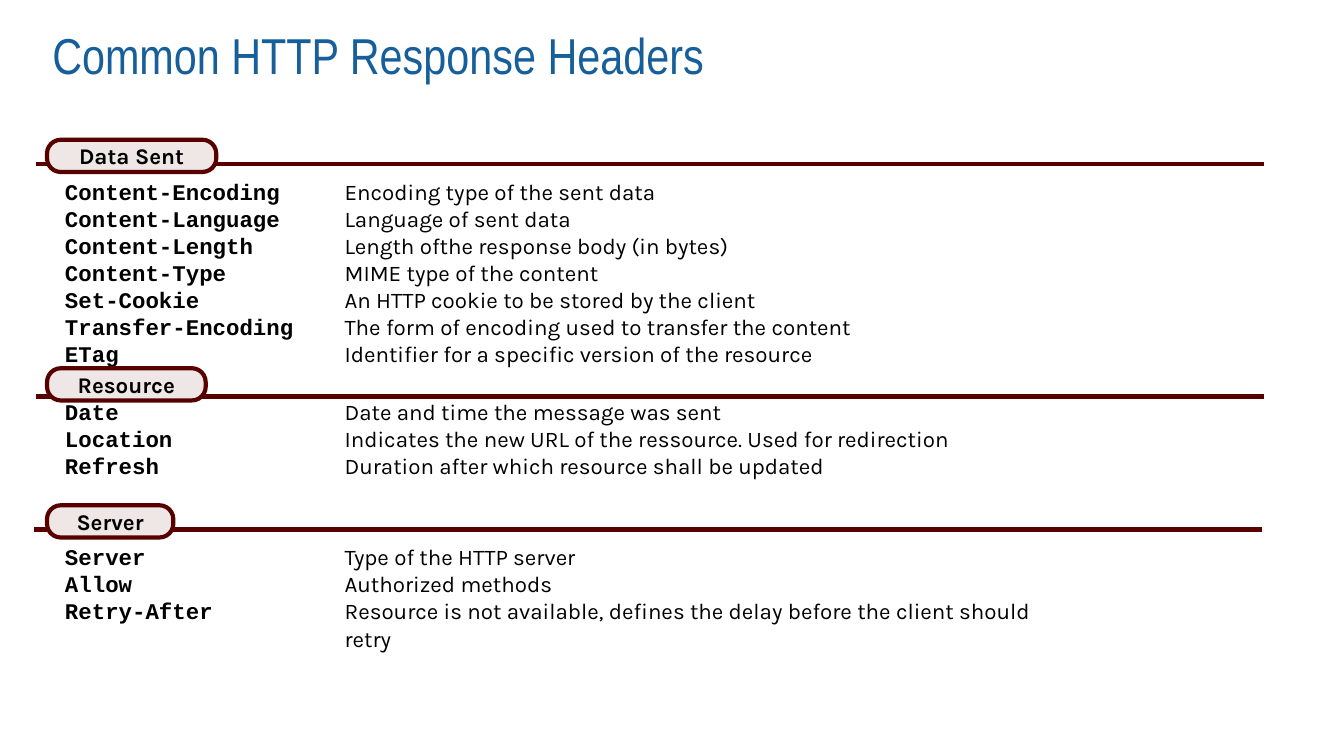
"""Build a slide listing common HTTP response headers by group."""
import pptx
import pptx.util
import pptx.dml.color
import pptx.enum.shapes
import pptx.enum.text
import pptx.oxml

Pt = pptx.util.Pt
Text = pptx.enum.text

TITLE = "Common HTTP Response Headers"
GROUPS = [
    {
        "label": "Data Sent", "wide": 90.7, "pill": 74.9,
        "left": 19.4, "rule": 87.8, "text": 92.2,
        "rows": [
            ("Content-Encoding", "Encoding type of the sent data"),
            ("Content-Language", "Language of sent data"),
            ("Content-Length", "Length ofthe response body (in bytes)"),
            ("Content-Type", "MIME type of the content"),
            ("Set-Cookie", "An HTTP cookie to be stored by the client"),
            ("Transfer-Encoding", "The form of encoding used to transfer the content"),
            ("ETag", "Identifier for a specific version of the resource"),
        ],
    },
    {
        "label": "Resource", "wide": 85, "pill": 197.3,
        "left": 19.4, "rule": 212.4, "text": 210.2,
        "rows": [
            ("Date", "Date and time the message was sent"),
            ("Location", "Indicates the new URL of the ressource. Used for redirection"),
            ("Refresh", "Duration after which resource shall be updated"),
        ],
    },
    {
        "label": "Server", "wide": 67.7, "pill": 270.7,
        "left": 18, "rule": 283.7, "text": 288,
        "rows": [
            ("Server", "Type of the HTTP server"),
            ("Allow", "Authorized methods"),
            ("Retry-After", "Resource is not available, defines the delay "
                            "before the client should retry"),
        ],
    },
]
COLORS = {"title": "165F9A", "rule": "580000", "pill": "EFE7E5", "text": "000000"}
COLUMNS = [(28.8, 145, "Courier New", True), (178.6, 405, "Karla", False)]
SIZE, PITCH = 12, 14.5
SPAN, THICK, HIGH = 658, 2.25, 17.3


def color(name):
    return pptx.dml.color.RGBColor.from_string(COLORS[name])


def style(para, face, size, tone, bold=False):
    font = para.font
    font.name, font.size, font.bold = face, Pt(size), bold
    font.color.rgb = color(tone)


def clear(frame):
    frame.margin_left = frame.margin_right = 0
    frame.margin_top = frame.margin_bottom = 0


def edge(shape):
    shape.line.color.rgb = color("rule")
    shape.line.width = Pt(THICK)


def add_title(slide):
    title = slide.shapes.title
    title.left, title.top, title.width, title.height = map(Pt, (28, 13, 652, 64))
    frame = title.text_frame
    clear(frame)
    frame.auto_size = Text.MSO_AUTO_SIZE.NONE
    frame.vertical_anchor = Text.MSO_ANCHOR.TOP
    frame.text = TITLE
    para = frame.paragraphs[0]
    para.alignment = Text.PP_ALIGN.LEFT
    style(para, "Arial Narrow", 27, "title")


def add_rule(slide, left, top):
    rule = slide.shapes.add_connector(
        pptx.enum.shapes.MSO_CONNECTOR.STRAIGHT,
        Pt(left), Pt(top), Pt(left + SPAN), Pt(top))
    edge(rule)
    props = rule._element.spPr
    props.append(pptx.oxml.parse_xml(
        '<a:effectLst xmlns:a="http://schemas.openxmlformats.org/drawingml/2006/main"/>'))


def add_column(slide, lines, top, column):
    left, width, face, bold = column
    high = len(lines) * PITCH + 6
    box = slide.shapes.add_textbox(Pt(left), Pt(top), Pt(width), Pt(high))
    frame = box.text_frame
    frame.word_wrap = True
    frame.margin_left = frame.margin_right = Pt(6)
    frame.margin_top = frame.margin_bottom = Pt(3)
    frame.text = "\n".join(lines)
    for para in frame.paragraphs:
        para.line_spacing = Pt(PITCH)
        style(para, face, SIZE, "text", bold)


def add_pill(slide, label, top, width):
    pill = slide.shapes.add_shape(
        pptx.enum.shapes.MSO_SHAPE.ROUNDED_RECTANGLE,
        Pt(25.2), Pt(top), Pt(width), Pt(HIGH))
    pill.adjustments[0] = 0.43
    pill.shadow.inherit = False
    pill.fill.solid()
    pill.fill.fore_color.rgb = color("pill")
    edge(pill)
    frame = pill.text_frame
    clear(frame)
    frame.vertical_anchor = Text.MSO_ANCHOR.MIDDLE
    frame.text = label
    para = frame.paragraphs[0]
    para.alignment = Text.PP_ALIGN.CENTER
    style(para, "Karla", SIZE, "text", True)


def main():
    deck = pptx.Presentation()
    deck.slide_width, deck.slide_height = Pt(720), Pt(405)
    slide = deck.slides.add_slide(deck.slide_layouts[5])
    add_title(slide)
    for group in GROUPS:
        add_rule(slide, group["left"], group["rule"])
        for lines, column in zip(zip(*group["rows"]), COLUMNS):
            add_column(slide, lines, group["text"], column)
        add_pill(slide, group["label"], group["pill"], group["wide"])
    deck.save("out.pptx")


if __name__ == "__main__":
    main()
